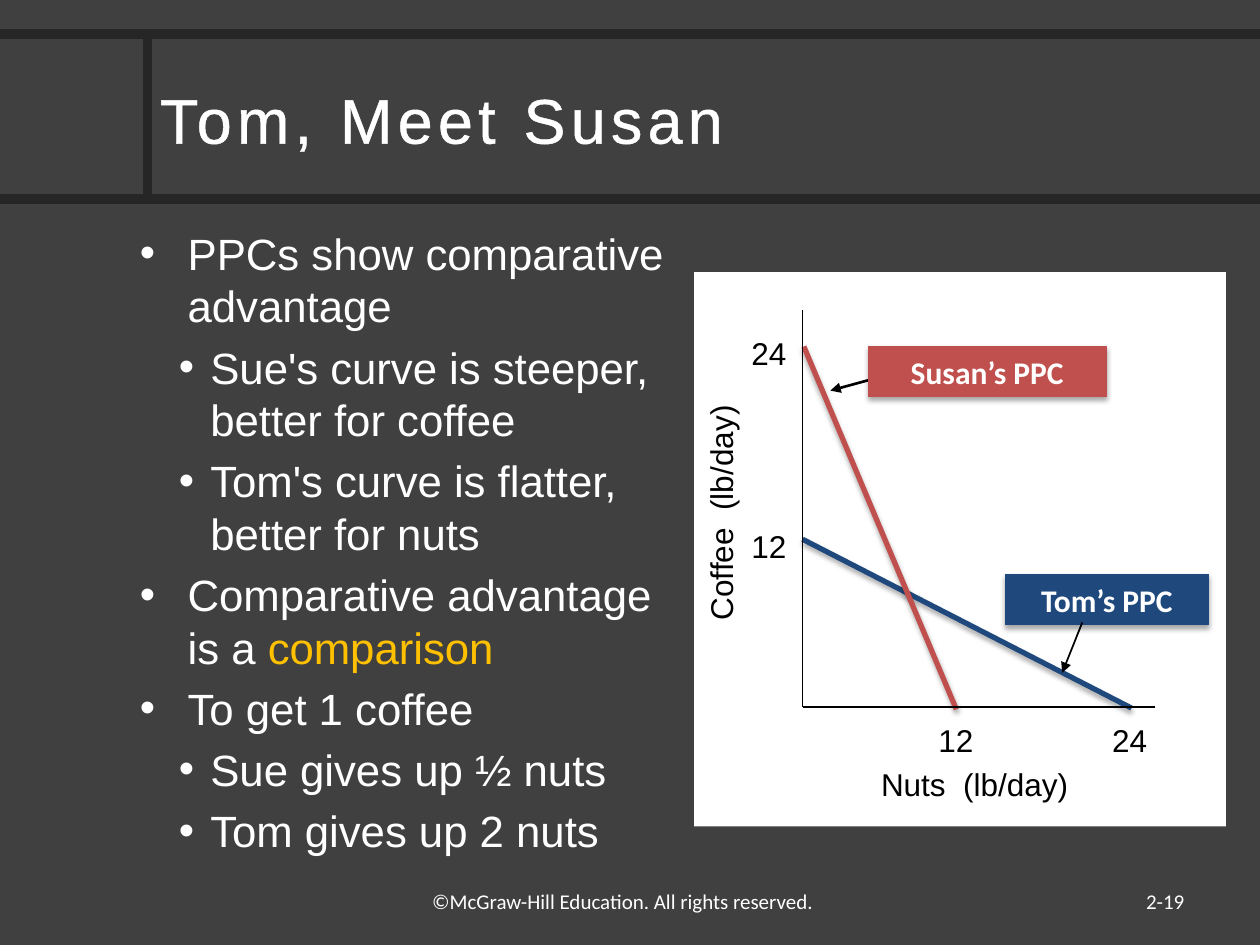
from lxml.etree import SubElement
from pptx import Presentation
from pptx.dml.color import RGBColor
from pptx.enum.shapes import MSO_CONNECTOR as CONN, MSO_SHAPE as SHAPE
from pptx.enum.text import MSO_ANCHOR as ANCHOR, PP_ALIGN as ALIGN
from pptx.oxml.ns import qn
from pptx.util import Inches, Pt

COLS, ROWS = 100, 75
CELL = Inches(0.1)
WHITE, BLACK, BACK, RULE = "FFFFFF", "000000", "404040", "262626"
BLUE, RED, GOLD = "1F497D", "C0504D", "FFC000"


def rgb(value):
    return RGBColor.from_string(value)


def grid(*cells):
    return [round(c * CELL) for c in cells]


def child(parent, tag, **attrs):
    return SubElement(parent, qn(tag), {k: str(v) for k, v in attrs.items()})


def add_shadow(effects):
    shadow = child(effects, "a:outerShdw", blurRad=Pt(3.1), dist=Pt(1.8),
                   dir=5400000, rotWithShape=0)
    child(child(shadow, "a:srgbClr", val=BLACK), "a:alpha", val=35000)


def add_line(s, start, end, color, width, arrow=False, shadow=False):
    line = s.shapes.add_connector(CONN.STRAIGHT, *grid(*start, *end))
    line.line.color.rgb = rgb(color)
    line.line.width = Pt(width)
    if arrow:
        child(line.line._get_or_add_ln(), "a:tailEnd", type="triangle")
    effects = child(line._element.spPr, "a:effectLst")
    if shadow:
        add_shadow(effects)


def add_rect(s, box, color, outlined=False):
    rect = s.shapes.add_shape(SHAPE.RECTANGLE, *grid(*box))
    rect.fill.solid()
    rect.fill.fore_color.rgb = rgb(color)
    rect.shadow.inherit = False
    if outlined:
        rect.line.color.rgb = rgb(color)
        rect.line.width = Pt(0.75)
        add_shadow(rect._element.spPr.find(qn("a:effectLst")))
    else:
        rect.line.fill.background()
    return rect


def style(p, size, color, font="Arial", align=ALIGN.LEFT, bold=False):
    p.alignment = align
    p.font.name = font
    p.font.size = Pt(size)
    p.font.bold = bold
    p.font.color.rgb = rgb(color)


def add_text(s, box, text, size, color, font="Arial", align=ALIGN.LEFT,
             anchor=ANCHOR.TOP):
    tb = s.shapes.add_textbox(*grid(*box))
    tf = tb.text_frame
    tf.word_wrap = True
    tf.margin_left = tf.margin_right = 0
    tf.vertical_anchor = anchor
    tf.text = text
    style(tf.paragraphs[0], size, color, font, align)
    return tb


def add_header(s, box):
    x, y, w, h = box
    divider = x + 11.7
    add_line(s, (x, y + h), (x + w, y + h), RULE, 5.5)
    add_line(s, (divider, y), (divider, y + h), RULE, 5.5)
    add_line(s, (x, y), (x + w, y), RULE, 5.5)
    title = add_text(s, (divider + 1, y + 0.3, w - 13.7, h - 0.3),
                     "Tom, Meet Susan", 36, WHITE, anchor=ANCHOR.MIDDLE)
    props = title.text_frame.paragraphs[0].runs[0]._r.get_or_add_rPr()
    props.set("spc", "300")
    outline = child(props, "a:ln", w=Pt(1.45))
    child(child(outline, "a:solidFill"), "a:srgbClr", val=WHITE)


def add_bullets(s, box):
    points = [
        (0, [("PPCs show comparative advantage", None)]),
        (1, [("Sue's curve is steeper, better for coffee", None)]),
        (1, [("Tom's curve is flatter, better for nuts", None)]),
        (0, [("Comparative advantage is a ", None), ("comparison", GOLD)]),
        (0, [("To get 1 coffee", None)]),
        (1, [("Sue gives up ½ nuts", None)]),
        (1, [("Tom gives up 2 nuts", None)]),
    ]
    indents = [(0.38, -0.38), (0.56, -0.25)]
    tf = add_text(s, box, "", 25, WHITE).text_frame
    for i, (level, runs) in enumerate(points):
        p = tf.add_paragraph() if i else tf.paragraphs[0]
        left, hang = indents[level]
        p.level = level
        p.space_before = Pt(5 if i else 0)
        props = p._p.get_or_add_pPr()
        props.set("marL", str(Inches(left)))
        props.set("indent", str(Inches(hang)))
        child(props, "a:buFont", typeface="Arial")
        child(props, "a:buChar", char="•")
        style(p, 25, WHITE)
        for text, color in runs:
            r = p.add_run()
            r.text = text
            if color:
                r.font.color.rgb = rgb(color)


def add_callout(s, box, text, color):
    tf = add_rect(s, box, color, outlined=True).text_frame
    tf.vertical_anchor = ANCHOR.TOP
    tf.text = text
    style(tf.paragraphs[0], 18, WHITE, "Calibri", ALIGN.CENTER, True)


def add_ppc_graph(s, box):
    x, y, w, h = box

    def at(dx, dy):
        return x + dx, y + dy

    def label(dx, dy, width, text, align=ALIGN.CENTER):
        return add_text(s, (*at(dx, dy), width, 4), text, 18, BLACK, align=align)

    origin = at(8.6, 34.5)
    add_rect(s, box, WHITE)
    label(8.3, 38.6, 27.9, "Nuts  (lb/day)")
    label(-17.7, 17.1, 39.6, "Coffee  (lb/day)").rotation = 270
    for text, across, tick_x, tick_y in (("12", 18.3, 3.1, 19.7),
                                         ("24", 32.1, 3.1, 4.4)):
        label(across, 35.1, 4.9, text)
        label(tick_x, tick_y, 4.2, text, ALIGN.RIGHT)
    add_line(s, at(8.6, 21.2), at(34.7, 34.6), BLUE, 3, shadow=True)
    add_callout(s, (*at(24.7, 24), 16.1, 4), "Tom’s PPC", BLUE)
    add_line(s, at(8.7, 5.9), at(20.8, 34.7), RED, 3, shadow=True)
    add_line(s, at(14.1, 8.5), at(10.8, 9.4), BLACK, 1.5, arrow=True)
    add_callout(s, (*at(13.8, 5.9), 18.9, 4), "Susan’s PPC", RED)
    add_line(s, at(30.8, 27.8), at(29.2, 31.8), BLACK, 1, arrow=True)
    add_line(s, at(36.6, 34.5), origin, BLACK, 1)
    add_line(s, at(8.6, 3), origin, BLACK, 1)


def add_footer(s, box):
    x, y, w, h = box
    add_text(s, (x, y + 0.5, 33.6, h - 0.5),
             "©McGraw-Hill Education. All rights reserved.", 12, WHITE, "Calibri")
    add_text(s, (x + w - 21.3, y, 21.3, h), "2-19", 12, WHITE, "Calibri",
             ALIGN.RIGHT, ANCHOR.MIDDLE)


def main():
    prs = Presentation()
    prs.slide_width, prs.slide_height = grid(COLS, ROWS)
    s = prs.slides.add_slide(prs.slide_layouts[6])
    s.background.fill.solid()
    s.background.fill.fore_color.rgb = rgb(BACK)
    add_header(s, (0, 2.7, COLS, 13.1))
    add_bullets(s, (11.1, 17.5, 42.3, 49.5))
    add_footer(s, (34.3, 69.5, 59.7, 4))
    add_ppc_graph(s, (55.1, 21.6, 42.2, 44))
    prs.save("out.pptx")


if __name__ == "__main__":
    main()
